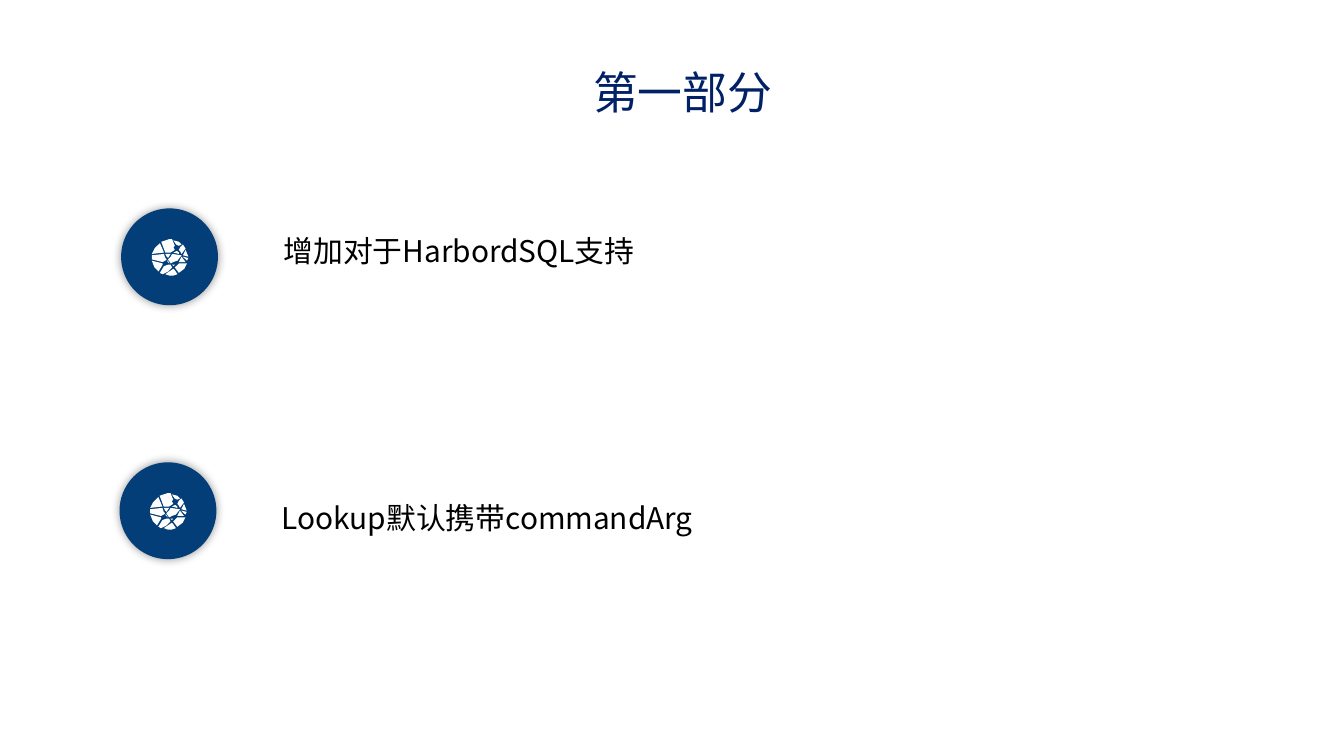
from dataclasses import dataclass

from lxml import etree
from pptx import Presentation, util as u
from pptx.dml.color import RGBColor
from pptx.enum import shapes, text
from pptx.oxml.ns import qn

COLORS = {"title": "002166", "badge": "033E78", "globe": "FFFFFF",
          "body": "000000", "shadow": "000000"}
FONT = "Noto Sans CJK SC"
BADGE_SIZE = u.Cm(1.83)
GLOBE_SIZE = u.Cm(0.69)
GLOBE_INSET = u.Cm(0.58)

# Patches of the globe between its network lines, on a 27 x 27 grid
GLOBE_GRID = 27
GLOBE_PATCHES = [
    [(16, 22), (17, 23), (19, 26), (16, 27), (13, 27), (10, 26)],
    [(15, 19), (17, 19), (16, 20)],
    [(12, 19), (14, 19), (15, 21), (12, 24), (8, 26), (6, 25), (9, 20)],
    [(26, 18), (24, 22), (20, 25), (17, 21), (18, 20), (20, 18)],
    [(0, 16), (8, 18), (8, 19), (5, 24), (2, 21)],
    [(12, 16), (13, 18), (11, 16)],
    [(22, 13), (25, 17), (20, 17)],
    [(23, 13), (27, 14), (26, 16)],
    [(9, 11), (10, 14), (11, 15), (10, 16), (8, 17), (0, 15), (0, 12)],
    [(15, 11), (22, 12), (19, 16), (16, 17), (14, 18), (12, 15), (14, 13)],
    [(14, 11), (12, 14), (11, 13), (10, 11)],
    [(18, 9), (19, 9), (20, 10), (20, 11), (16, 10)],
    [(25, 8), (27, 13), (23, 12)],
    [(23, 4), (25, 7), (22, 11), (21, 9), (20, 8), (21, 6)],
    [(6, 3), (9, 10), (0, 11), (2, 7)],
    [(16, 1), (20, 2), (22, 4), (20, 5), (18, 4)],
    [(13, 0), (15, 0), (17, 5), (16, 6), (17, 8), (14, 10), (10, 10), (7, 2)],
]


@dataclass
class Topic:
    wording: str
    badge_left: float
    badge_top: float
    text_left: float
    text_top: float


TOPICS = [
    Topic("增加对于HarbordSQL支持", 2.29, 3.94, 5.11, 4.27),
    Topic("Lookup默认携带commandArg", 2.26, 8.74, 5.08, 9.32),
]


def paint(shape, color: str) -> None:
    shape.fill.solid()
    shape.fill.fore_color.rgb = RGBColor.from_string(COLORS[color])
    shape.line.fill.background()
    shape.shadow.inherit = False


def add_glow(shape) -> None:
    """Soft, centred shadow around a shape."""
    effects = shape.element.spPr.find(qn("a:effectLst"))
    shadow = etree.SubElement(effects, qn("a:outerShdw"), blurRad=str(u.Pt(5)),
                              dist="0", dir="0", algn="ctr", rotWithShape="0")
    color = etree.SubElement(shadow, qn("a:srgbClr"), val=COLORS["shadow"])
    etree.SubElement(color, qn("a:alpha"), val="40000")


def add_text(slide, wording: str, left: float, top: float, width: float,
             height: float, size: int, color: str):
    frame = slide.shapes.add_textbox(
        u.Cm(left), u.Cm(top), u.Cm(width), u.Cm(height)).text_frame
    frame.word_wrap = True
    frame.text = wording
    font = frame.paragraphs[0].runs[0].font
    font.size = u.Pt(size)
    font.name = FONT
    font.color.rgb = RGBColor.from_string(COLORS[color])
    # Chinese characters take their typeface from a:ea
    latin = font._element.find(qn("a:latin"))
    latin.addnext(etree.Element(qn("a:ea"), typeface=FONT))
    return frame


def add_badge(slide, left: int, top: int) -> None:
    group = slide.shapes.add_group_shape()
    disc = group.shapes.add_shape(shapes.MSO_SHAPE.OVAL, left, top,
                                  BADGE_SIZE, BADGE_SIZE)
    paint(disc, "badge")
    add_glow(disc)

    first, *others = GLOBE_PATCHES
    outline = group.shapes.build_freeform(*first[0], scale=GLOBE_SIZE / GLOBE_GRID)
    outline.add_line_segments(first[1:], close=True)
    for patch in others:
        outline.move_to(*patch[0])
        outline.add_line_segments(patch[1:], close=True)
    globe = outline.convert_to_shape(left + GLOBE_INSET, top + GLOBE_INSET)
    paint(globe, "globe")


def main() -> None:
    deck = Presentation()
    deck.slide_width, deck.slide_height = u.Cm(25.4), u.Cm(14.29)
    slide = deck.slides.add_slide(deck.slide_layouts[6])

    # Section title
    title = add_text(slide, "第一部分", 8.31, 1.14, 9.19, 1.17, 24, "title")
    title.margin_left = title.margin_right = u.Cm(0.15)
    title.margin_top = title.margin_bottom = u.Cm(0.08)
    title.paragraphs[0].alignment = text.PP_ALIGN.CENTER

    # Topics, each with a globe badge
    for topic in TOPICS:
        add_badge(slide, u.Cm(topic.badge_left), u.Cm(topic.badge_top))
        add_text(slide, topic.wording, topic.text_left, topic.text_top,
                 14.12, 0.94, 16, "body")

    deck.save("out.pptx")


if __name__ == "__main__":
    main()
